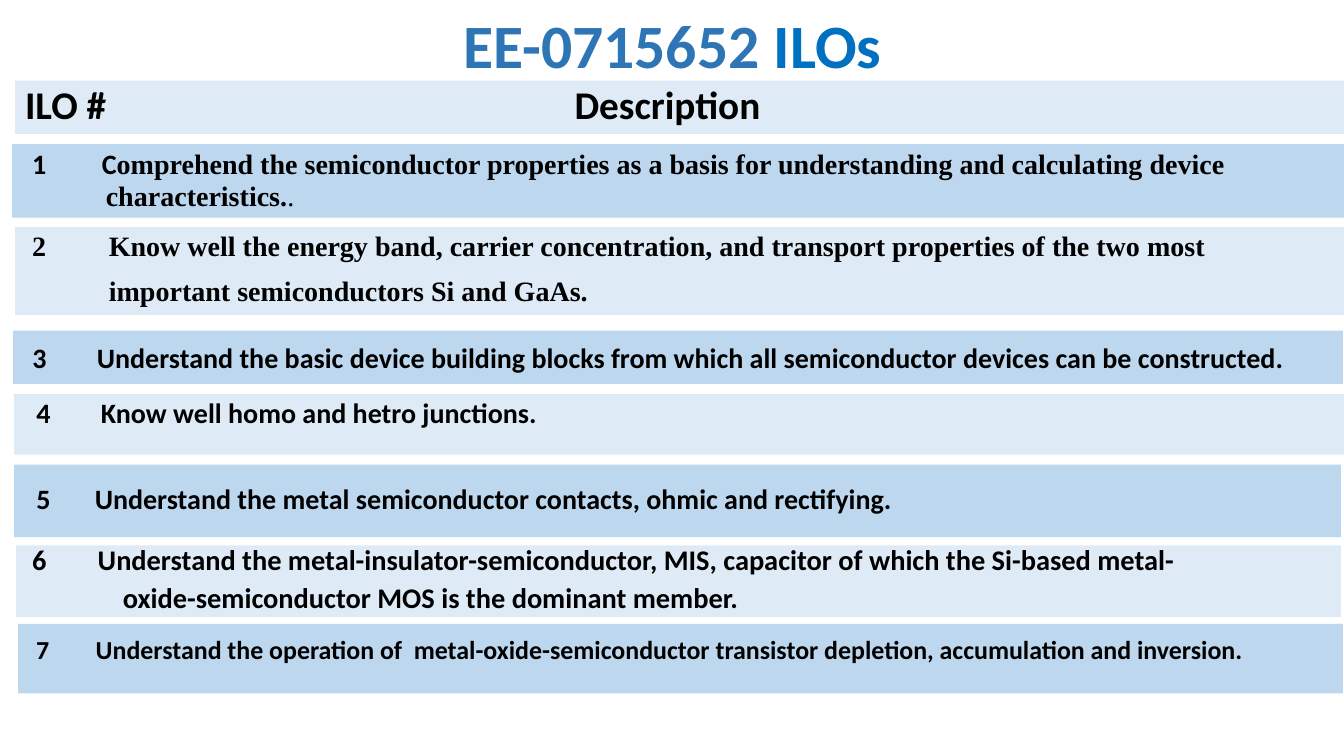
from dataclasses import dataclass

from lxml.etree import SubElement
from pptx import Presentation
from pptx.dml.color import RGBColor
from pptx.enum.shapes import MSO_SHAPE as Preset
from pptx.enum.text import MSO_ANCHOR as Anchor, MSO_AUTO_SIZE as AutoSize, PP_ALIGN as Align
from pptx.oxml.ns import qn
from pptx.util import Inches, Pt


@dataclass(frozen=True)
class Theme:
    pale: str = "DEEBF7"
    medium: str = "BDD7EE"
    ink: str = "000000"
    code_blue: str = "2E75B6"
    title_blue: str = "0070C0"
    sans: str = "Calibri"
    serif: str = "Times New Roman"
    title_size: float = 44
    header_size: float = 28
    body_size: float = 20


THEME = Theme()


@dataclass(frozen=True)
class Piece:
    text: str
    font: str = THEME.sans
    bold: bool = True
    color: str = THEME.ink


@dataclass(frozen=True)
class Band:
    left: float
    top: float
    width: float
    height: float
    label: str
    label_x: float
    text_x: float
    first: tuple[Piece, ...]
    second: tuple[Piece, ...] = ()
    second_x: float = 0
    size: float = THEME.body_size
    inset: float = 0.05
    spacing: float = 0.9
    gap: float = 10
    outlined: bool = False


BANDS = (
    Band(0.15, 0.8, 13.19, 0.53, "ILO #", 0.25, 5.7, (Piece("Description"),),
         size=THEME.header_size),
    Band(0.12, 1.43, 13.24, 0.73, "1", 0.32, 1.01,
         (Piece("C"), Piece("omprehend the semiconductor properties as a basis for "
                            "understanding and calculating device", THEME.serif)),
         (Piece("characteristics.", THEME.serif), Piece(".", THEME.serif, False)), 1.05,
         spacing=0.95, gap=0),
    Band(0.15, 2.26, 13.2, 0.86, "2", 0.32, 1.08,
         (Piece("Know well the energy band, carrier concentration, and transport "
                "properties of the two most", THEME.serif),),
         (Piece("important semiconductors Si and GaAs.", THEME.serif),), 1.08,
         outlined=True),
    Band(0.13, 3.28, 13.19, 0.53, "3", 0.32, 0.96,
         (Piece("Understand the basic device building blocks from which all "
                "semiconductor devices can be constructed."),), inset=0.14),
    Band(0.14, 3.91, 13.22, 0.6, "4", 0.36, 1.0,
         (Piece("Know well homo and hetro junctions."),)),
    Band(0.14, 4.61, 13.16, 0.72, "5", 0.36, 0.94,
         (Piece("Understand the metal semiconductor contacts, ohmic and rectifying."),),
         inset=0.2),
    Band(0.16, 5.41, 13.14, 0.71, "6", 0.32, 0.97,
         (Piece("Understand the metal-insulator-semiconductor, MIS, capacitor of which "
                "the Si-based metal-"),),
         (Piece("oxide-semiconductor MOS is the dominant member."),), 1.22,
         size=20.3, inset=0.06, spacing=0.7),
    Band(0.18, 6.19, 13.14, 0.69, "7", 0.36, 0.95,
         (Piece("Understand the operation of  metal-oxide-semiconductor transistor "
                "depletion, accumulation and inversion."),), size=18.5, inset=0.13),
)


def add_pieces(paragraph, pieces: tuple[Piece, ...], size: float) -> None:
    for piece in pieces:
        run = paragraph.add_run()
        run.text = piece.text
        run.font.name = piece.font
        run.font.size = Pt(size)
        run.font.bold = piece.bold
        run.font.color.rgb = RGBColor.from_string(piece.color)


def add_tab_stop(paragraph, position: float) -> None:
    tab_list = SubElement(paragraph._p.get_or_add_pPr(), qn("a:tabLst"))
    SubElement(tab_list, qn("a:tab"), pos=str(Inches(position)), algn="l")


def add_title(slide) -> None:
    title = slide.shapes.title
    title.left, title.top = Inches(0.92), Inches(-0.24)
    title.width, title.height = Inches(11.5), Inches(1.45)
    frame = title.text_frame
    frame.auto_size = AutoSize.NONE
    frame.vertical_anchor = Anchor.MIDDLE
    paragraph = frame.paragraphs[0]
    paragraph.alignment = Align.CENTER
    paragraph.line_spacing = 0.9
    add_pieces(paragraph, (Piece("EE-0715652 ", color=THEME.code_blue),
                           Piece("ILOs", color=THEME.title_blue)), THEME.title_size)


def add_band(slide, band: Band, color: str) -> None:
    shape = slide.shapes.add_shape(Preset.RECTANGLE, Inches(band.left), Inches(band.top),
                                   Inches(band.width), Inches(band.height))
    shape.shadow.inherit = False
    shape.fill.solid()
    shape.fill.fore_color.rgb = RGBColor.from_string(color)
    if band.outlined:
        shape.line.color.rgb = RGBColor.from_string(color)
        shape.line.width = Pt(0.75)
    else:
        shape.line.fill.background()

    frame = shape.text_frame
    frame.word_wrap = True
    frame.vertical_anchor = Anchor.TOP
    frame.margin_left = Inches(band.label_x - band.left)
    frame.margin_top = Inches(band.inset)
    frame.margin_right = frame.margin_bottom = 0

    paragraph = frame.paragraphs[0]
    paragraph.alignment = Align.LEFT
    paragraph.line_spacing = band.spacing
    add_tab_stop(paragraph, band.text_x - band.label_x)
    label_font = band.first[0].font
    add_pieces(paragraph, (Piece(band.label + "\t", label_font), *band.first), band.size)

    if band.second:
        paragraph = frame.add_paragraph()
        paragraph.alignment = Align.LEFT
        paragraph.line_spacing = band.spacing
        paragraph.space_before = Pt(band.gap)
        paragraph._p.get_or_add_pPr().set("marL", str(Inches(band.second_x - band.label_x)))
        add_pieces(paragraph, band.second, band.size)


def main() -> None:
    presentation = Presentation()
    presentation.slide_width, presentation.slide_height = Inches(13.33), Inches(7.5)
    slide = presentation.slides.add_slide(presentation.slide_layouts[5])
    add_title(slide)
    for index, band in enumerate(BANDS):
        add_band(slide, band, THEME.medium if index % 2 else THEME.pale)
    presentation.save("out.pptx")


if __name__ == "__main__":
    main()
